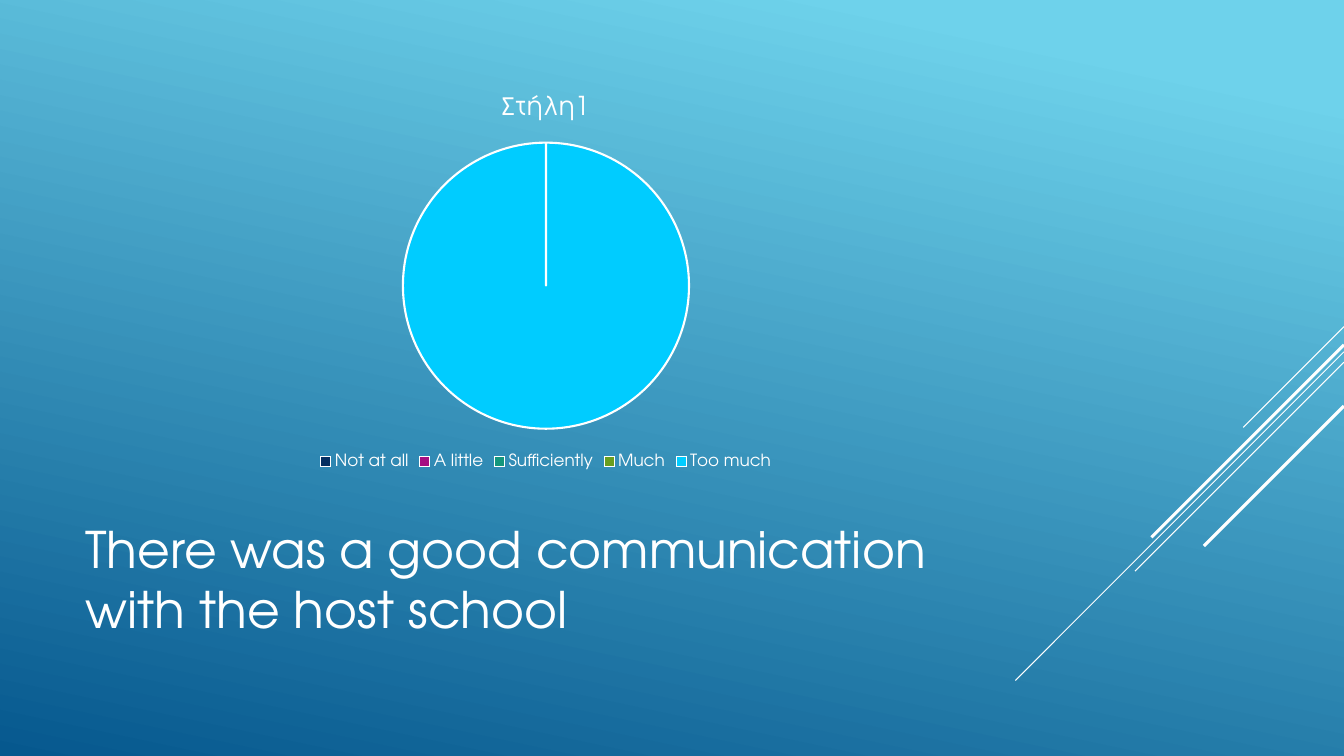
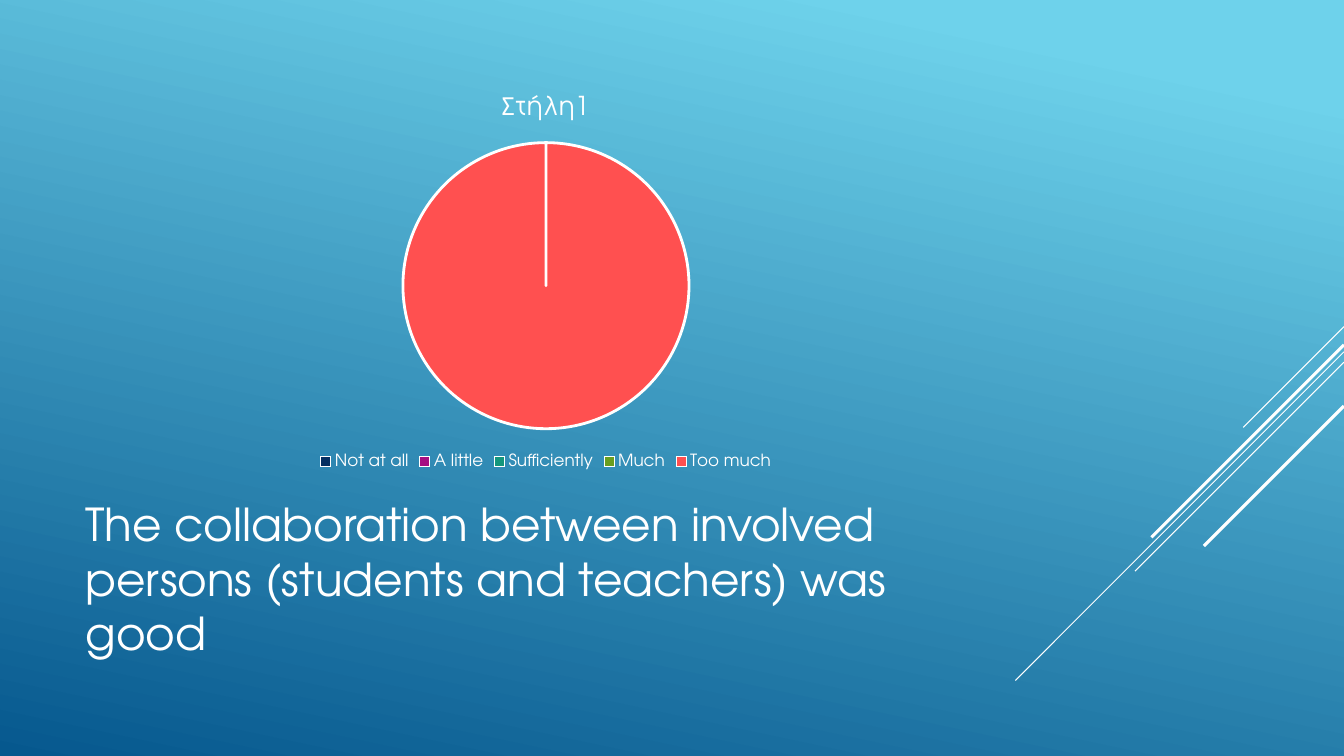
from dataclasses import dataclass

import lxml.etree
import pptx
import pptx.chart.data
import pptx.dml.color
import pptx.enum.chart
import pptx.enum.shapes
import pptx.enum.text
import pptx.oxml.ns
import pptx.util

Pt = pptx.util.Pt
RGB = pptx.dml.color.RGBColor.from_string


@dataclass(frozen=True)
class Theme:
    font: str = "TeX Gyre Adventor"
    text: str = "FFFFFF"
    sky: str = "6ED2EB"
    deep: str = "06588E"
    slices: tuple[str, ...] = ("052F61", "A50E82", "14967C", "6A9E1F")
    chart_size: float = 10
    chart_title_size: float = 18.6
    legend_size: float = 12


@dataclass(frozen=True)
class Streak:
    top: float
    run: float
    weight: float


@dataclass(frozen=True)
class Question:
    title: str
    size: float
    accent: str
    outline: float


THEME = Theme()
WIDTH, HEIGHT = 960, 540
LEFT, CONTENT_WIDTH = 54, 672
CHART_TOP, CHART_HEIGHT = 54, 284.4
TITLE_TOP, TITLE_HEIGHT = 353.5, 118.8

STREAKS = (
    Streak(233.3, 72, 0.75),
    Streak(251.3, 234.7, 0.75),
    Streak(258.7, 149.3, 0.75),
    Streak(246.3, 137.5, 2.25),
    Streak(290, 100, 2.25),
)
SERIES = "Στήλη1"
ANSWERS = {"Not at all": 0, "A little": 0, "Sufficiently": 0, "Much": 0, "Too much": 100}
QUESTIONS = (
    Question("There was a good communication with the host school", 36, "00CCFF", 1.5),
    Question(
        "The collaboration between involved persons (students and teachers) was good",
        32.4, "FF5050", 2,
    ),
)


def style_font(font: pptx.text.text.Font, size: float) -> None:
    font.name = THEME.font
    font.size = Pt(size)
    font.bold = False
    font.color.rgb = RGB(THEME.text)


def set_background(master: pptx.slide.SlideMaster) -> None:
    fill = master.background.fill
    fill.gradient()
    fill.gradient_angle = 360 - 102
    for stop, position, color in zip(fill.gradient_stops, (0.1, 1), (THEME.sky, THEME.deep)):
        stop.position = position
        stop.color.rgb = RGB(color)


def add_streak(s: pptx.slide.Slide, streak: Streak) -> None:
    line = s.shapes.add_connector(
        pptx.enum.shapes.MSO_CONNECTOR.STRAIGHT,
        Pt(WIDTH), Pt(streak.top), Pt(WIDTH - streak.run), Pt(streak.top + streak.run),
    )
    line.line.color.rgb = RGB(THEME.text)
    line.line.width = Pt(streak.weight)
    lxml.etree.SubElement(line._element.spPr, pptx.oxml.ns.qn("a:effectLst"))


def add_title(s: pptx.slide.Slide, question: Question) -> None:
    box = s.shapes.add_textbox(Pt(LEFT), Pt(TITLE_TOP), Pt(CONTENT_WIDTH), Pt(TITLE_HEIGHT))
    tf = box.text_frame
    tf.word_wrap = True
    tf.vertical_anchor = pptx.enum.text.MSO_ANCHOR.MIDDLE
    p = tf.paragraphs[0]
    p.text = question.title
    style_font(p.font, question.size)


def add_pie(s: pptx.slide.Slide, question: Question) -> None:
    data = pptx.chart.data.CategoryChartData()
    data.categories = list(ANSWERS)
    data.add_series(SERIES, list(ANSWERS.values()))
    chart = s.shapes.add_chart(
        pptx.enum.chart.XL_CHART_TYPE.PIE,
        Pt(LEFT), Pt(CHART_TOP), Pt(CONTENT_WIDTH), Pt(CHART_HEIGHT), data,
    ).chart
    style_font(chart.font, THEME.chart_size)

    chart.has_title = True
    p = chart.chart_title.text_frame.paragraphs[0]
    p.text = SERIES
    style_font(p.font, THEME.chart_title_size)

    chart.has_legend = True
    chart.legend.position = pptx.enum.chart.XL_LEGEND_POSITION.BOTTOM
    chart.legend.include_in_layout = False
    style_font(chart.legend.font, THEME.legend_size)

    plot = chart.plots[0]
    plot.vary_by_categories = True
    for i, color in enumerate((*THEME.slices, question.accent)):
        point = plot.series[0].points[i].format
        point.fill.solid()
        point.fill.fore_color.rgb = RGB(color)
        point.line.color.rgb = RGB(THEME.text)
        point.line.width = Pt(question.outline)


def main() -> None:
    prs = pptx.Presentation()
    prs.slide_width, prs.slide_height = Pt(WIDTH), Pt(HEIGHT)
    set_background(prs.slide_master)
    for question in QUESTIONS:
        s = prs.slides.add_slide(prs.slide_layouts[6])
        for streak in STREAKS:
            add_streak(s, streak)
        add_title(s, question)
        add_pie(s, question)
    prs.save("out.pptx")


if __name__ == "__main__":
    main()
